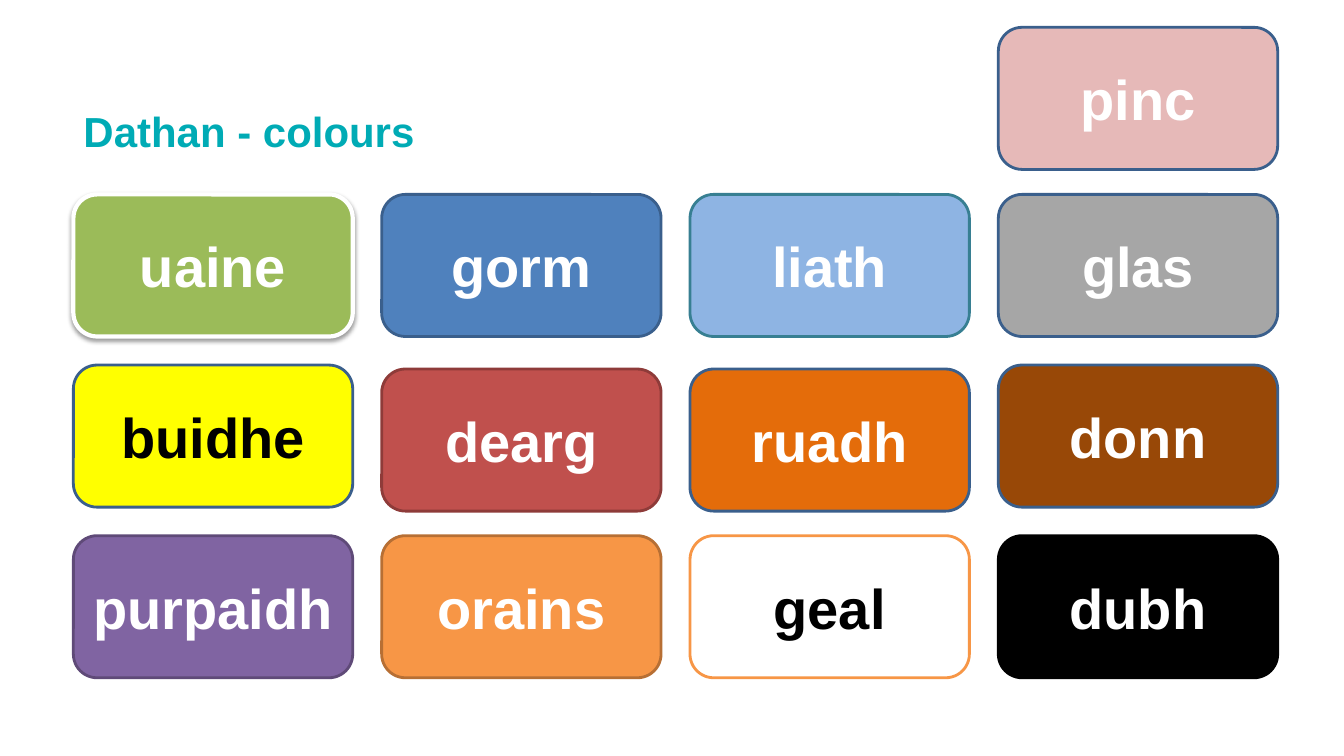
from lxml.etree import SubElement
from pptx import Presentation
from pptx.dml.color import RGBColor
from pptx.enum.shapes import MSO_SHAPE
from pptx.enum.text import MSO_ANCHOR, MSO_AUTO_SIZE, PP_ALIGN
from pptx.oxml.ns import qn
from pptx.util import Cm, Pt

WHITE = RGBColor(0xFF, 0xFF, 0xFF)
BLACK = RGBColor(0x00, 0x00, 0x00)
TEAL = RGBColor(0x00, 0xAB, 0xB5)
NAVY = RGBColor(0x3A, 0x5F, 0x8C)
PINK = RGBColor(0xE6, 0xB9, 0xB8)
GREEN = RGBColor(0x9B, 0xBB, 0x59)
BLUE = RGBColor(0x4F, 0x81, 0xBD)
SKY = RGBColor(0x8E, 0xB4, 0xE3)
SEA = RGBColor(0x37, 0x7F, 0x92)
GREY = RGBColor(0xA6, 0xA6, 0xA6)
YELLOW = RGBColor(0xFF, 0xFF, 0x00)
RED = RGBColor(0xC0, 0x50, 0x4D)
MAROON = RGBColor(0x8E, 0x3B, 0x39)
RUST = RGBColor(0xE4, 0x6C, 0x0A)
BROWN = RGBColor(0x98, 0x48, 0x07)
PURPLE = RGBColor(0x80, 0x64, 0xA2)
PLUM = RGBColor(0x5F, 0x4A, 0x78)
ORANGE = RGBColor(0xF7, 0x96, 0x46)
COPPER = RGBColor(0xB7, 0x6F, 0x34)

LEFT, TOP = 1.85, 4.9
STEP_X, STEP_Y = 7.77, 4.3
WIDE, HIGH = 7.04, 3.58
PINK_TOP = 0.69
DROP = 0.1

ROWS = [
    [("uaine", GREEN, WHITE), ("gorm", BLUE, NAVY),
     ("liath", SKY, SEA), ("glas", GREY, NAVY)],
    [("buidhe", YELLOW, NAVY), ("dearg", RED, MAROON),
     ("ruadh", RUST, NAVY), ("donn", BROWN, NAVY)],
    [("purpaidh", PURPLE, PLUM), ("orains", ORANGE, COPPER),
     ("geal", WHITE, ORANGE), ("dubh", BLACK, BLACK)],
]
DARK = {"buidhe", "geal"}
LOW = {"dearg", "ruadh"}
RAISED = {"uaine"}


class Board:
    face = {"name": "Arial", "bold": True}

    def __init__(self, deck):
        self.slide = deck.slides.add_slide(deck.slide_layouts[5])

    def label(self, shape, text, size, color, align):
        frame = shape.text_frame
        look = {"word_wrap": False, "auto_size": MSO_AUTO_SIZE.NONE,
                "vertical_anchor": MSO_ANCHOR.MIDDLE}
        for key, value in look.items():
            setattr(frame, key, value)
        para = frame.paragraphs[0]
        para.alignment = align
        run = para.add_run()
        run.text = text
        for key, value in {**self.face, "size": Pt(size)}.items():
            setattr(run.font, key, value)
        run.font.color.rgb = color

    def title(self, text, left, top, width, height):
        shape = self.slide.shapes.title
        box = {"left": left, "top": top, "width": width, "height": height}
        for key, value in box.items():
            setattr(shape, key, Cm(value))
        self.label(shape, text, 30, TEAL, PP_ALIGN.LEFT)
        shape.text_frame.word_wrap = True

    def card(self, text, fill, edge, left, top):
        shape = self.slide.shapes.add_shape(
            MSO_SHAPE.ROUNDED_RECTANGLE, Cm(left), Cm(top), Cm(WIDE), Cm(HIGH))
        shape.shadow.inherit = False
        shape.fill.solid()
        shape.fill.fore_color.rgb = fill
        shape.line.color.rgb = edge
        shape.line.width = Pt(3 if text in RAISED else 2)
        if text in RAISED:
            self.shade(shape)
        ink = BLACK if text in DARK else WHITE
        self.label(shape, text, 40, ink, PP_ALIGN.CENTER)

    def shade(self, shape):
        effects = shape._element.spPr.find(qn("a:effectLst"))
        outer = SubElement(effects, qn("a:outerShdw"), {
            "blurRad": str(Pt(3.1)), "dist": str(Pt(1.6)),
            "dir": "5400000", "rotWithShape": "0"})
        color = SubElement(outer, qn("a:srgbClr"), {"val": str(BLACK)})
        SubElement(color, qn("a:alpha"), {"val": "38000"})


def main():
    deck = Presentation()
    deck.slide_width, deck.slide_height = Cm(33.87), Cm(19.05)
    board = Board(deck)
    board.title("Dathan - colours", LEFT, 2.31, 30.1, 1.98)
    board.card("pinc", PINK, NAVY, LEFT + 3 * STEP_X, PINK_TOP)
    for row, cards in enumerate(ROWS):
        for col, (text, fill, edge) in enumerate(cards):
            top = TOP + row * STEP_Y + (DROP if text in LOW else 0)
            board.card(text, fill, edge, LEFT + col * STEP_X, top)
    deck.save("out.pptx")


if __name__ == "__main__":
    main()
